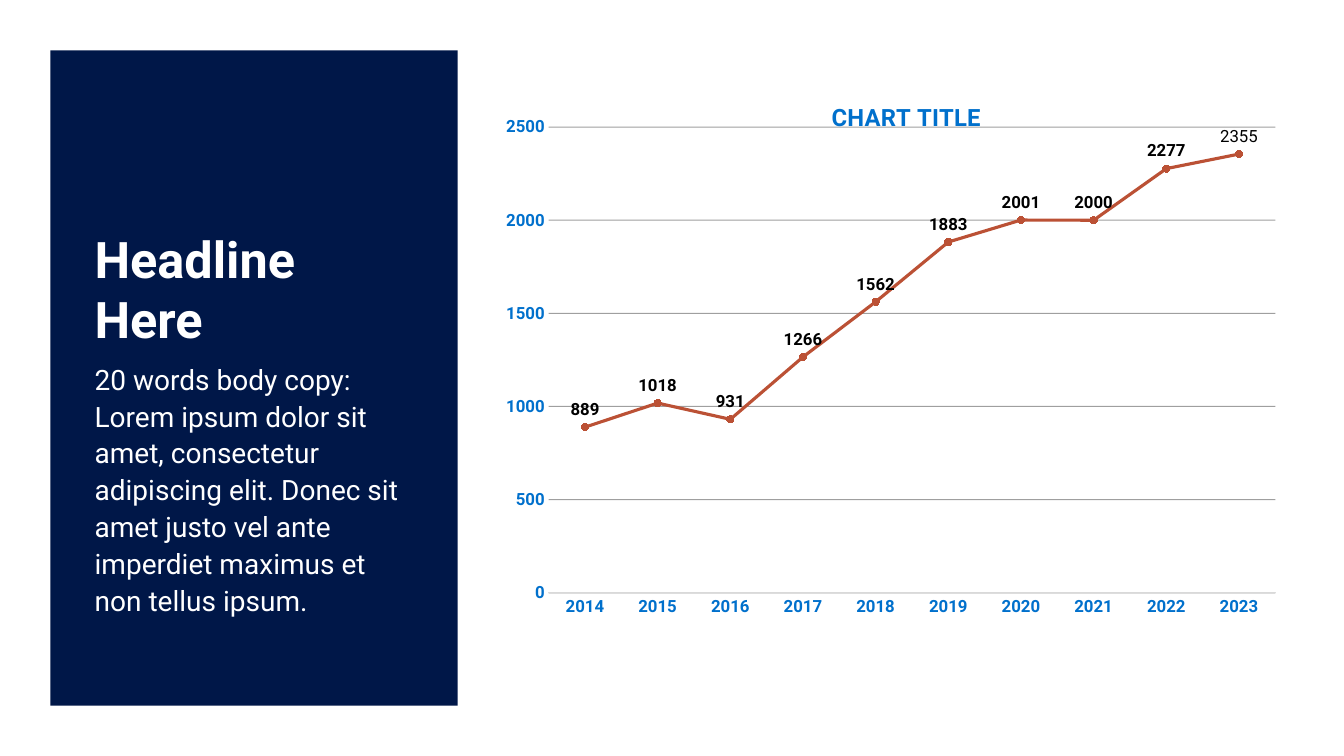
"""Build a slide with a headline panel and a line chart."""
from lxml.etree import SubElement
from pptx import Presentation
from pptx.chart.data import CategoryChartData
from pptx.dml.color import RGBColor
from pptx.enum.chart import XL_CHART_TYPE as ChartType, XL_LABEL_POSITION as LabelPosition
from pptx.enum.chart import XL_MARKER_STYLE as MarkerStyle, XL_TICK_MARK as TickMark
from pptx.enum.shapes import MSO_SHAPE as Shape
from pptx.enum.text import MSO_ANCHOR as Anchor
from pptx.oxml.ns import qn
from pptx.util import Pt

NAVY = RGBColor(0x00, 0x17, 0x48)
BLUE = RGBColor(0x00, 0x70, 0xCC)
RUST = RGBColor(0xBB, 0x51, 0x35)
WHITE = RGBColor(0xFF, 0xFF, 0xFF)
BLACK = RGBColor(0x00, 0x00, 0x00)
GREY = RGBColor(0x40, 0x40, 0x40)
PALE_GREY = RGBColor(0xD9, 0xD9, 0xD9)

HEADLINE = "Headline Here"
BODY = ("20 words body copy: Lorem ipsum dolor sit amet, consectetur adipiscing elit. "
        "Donec sit amet justo vel ante imperdiet maximus et non tellus ipsum.")
YEARS = [str(year) for year in range(2014, 2024)]
VALUES = [889, 1018, 931, 1266, 1562, 1883, 2001, 2000, 2277, 2355]


def assign(target, values):
    for name, value in values.items():
        setattr(target, name, value)


class SlideBuilder:
    px = 9144
    font_name = "Roboto"

    def __init__(self, deck):
        self.page = deck.slides.add_slide(deck.slide_layouts[6])

    def frame(self, *lengths):
        return [length * self.px for length in lengths]

    def style(self, font, size, color, bold=False):
        assign(font, {"name": self.font_name, "size": Pt(size), "bold": bold})
        font.color.rgb = color

    def panel(self, at, color):
        box = self.page.shapes.add_shape(Shape.RECTANGLE, *self.frame(*at))
        box.shadow.inherit = False
        box.fill.solid()
        box.fill.fore_color.rgb = color
        box.line.fill.background()

    def text(self, at, words, size, color, bold=False, anchor=Anchor.TOP, spacing=None):
        box = self.page.shapes.add_textbox(*self.frame(*at))
        assign(box.text_frame, {"word_wrap": True, "vertical_anchor": anchor})
        para = box.text_frame.paragraphs[0]
        assign(para, spacing or {})
        span = para.add_run()
        span.text = words
        self.style(span.font, size, color, bold)

    def line_chart(self, at, title, categories, values):
        data = CategoryChartData()
        data.categories = categories
        data.add_series("Series 1", values)
        holder = self.page.shapes.add_chart(ChartType.LINE_MARKERS, *self.frame(*at), data)
        chart = holder.chart
        chart.has_legend = False
        self.style(chart.font, 12, BLACK, True)
        self.chart_title(chart, title)
        self.axes(chart)
        self.series(chart.plots[0])
        plot_area = chart.element.find(".//" + qn("c:plotArea"))
        self.place(plot_area, 0, layoutTarget="inner", xMode="edge", yMode="edge",
                   x=0.071, y=0.063, w=0.91, h=0.828)

    def chart_title(self, chart, words):
        chart.has_title = True
        title = chart.chart_title
        title.include_in_layout = False
        span = title.text_frame.paragraphs[0].add_run()
        span.text = words
        self.style(span.font, 17, BLUE, True)
        element = chart.element.find(".//" + qn("c:title"))
        self.place(element, 1, xMode="edge", yMode="edge", x=0.42, y=0.01)

    def place(self, element, index, **settings):
        layout = element.find(qn("c:layout"))
        if layout is None:
            layout = element.makeelement(qn("c:layout"))
            element.insert(index, layout)
        manual = SubElement(layout, qn("c:manualLayout"))
        for name, value in settings.items():
            SubElement(manual, qn(f"c:{name}")).set("val", str(value))

    def axes(self, chart):
        for axis in (chart.category_axis, chart.value_axis):
            assign(axis, {"major_tick_mark": TickMark.NONE, "minor_tick_mark": TickMark.NONE})
            self.style(axis.tick_labels.font, 12, BLUE, True)
        years, amounts = chart.category_axis, chart.value_axis
        years.format.line.color.rgb = PALE_GREY
        years.format.line.width = Pt(0.75)
        assign(amounts, {"minimum_scale": 0, "maximum_scale": 2500, "major_unit": 500,
                         "has_major_gridlines": True})
        amounts.format.line.fill.background()
        grid = amounts.major_gridlines.format.line
        grid.color.rgb = GREY
        grid.width = Pt(0.75)
        color = amounts.element.find(".//" + qn("c:majorGridlines")).find(".//" + qn("a:srgbClr")) \
            if hasattr(amounts, "element") else \
            chart.element.find(".//" + qn("c:majorGridlines")).find(".//" + qn("a:srgbClr"))
        SubElement(color, qn("a:alpha")).set("val", "50000")

    def series(self, plot):
        plot.vary_by_categories = False
        series = plot.series[0]
        series.smooth = False
        series.format.line.color.rgb = RUST
        series.format.line.width = Pt(2.25)
        marker = series.marker
        assign(marker, {"style": MarkerStyle.CIRCLE, "size": 5})
        marker.format.fill.solid()
        marker.format.fill.fore_color.rgb = RUST
        marker.format.line.color.rgb = RUST
        labels = series.data_labels
        assign(labels, {"show_value": True, "position": LabelPosition.ABOVE})
        self.style(labels.font, 12, BLACK, True)
        last = series.points[len(VALUES) - 1].data_label
        self.style(last.font, 12, BLACK)
        last.position = LabelPosition.ABOVE


def main():
    deck = Presentation()
    assign(deck, {"slide_width": 1333 * SlideBuilder.px, "slide_height": 750 * SlideBuilder.px})
    slide = SlideBuilder(deck)
    slide.panel((50, 50, 404, 650), NAVY)
    slide.text((84, 220, 332, 131), HEADLINE, 36, WHITE, bold=True, anchor=Anchor.BOTTOM)
    slide.line_chart((488, 91, 792, 558), "CHART TITLE", YEARS, VALUES)
    slide.text((84, 351, 332, 293), BODY, 20, WHITE,
               spacing={"line_spacing": 1.1, "space_before": Pt(4), "space_after": Pt(6)})
    deck.save("out.pptx")


if __name__ == "__main__":
    main()
